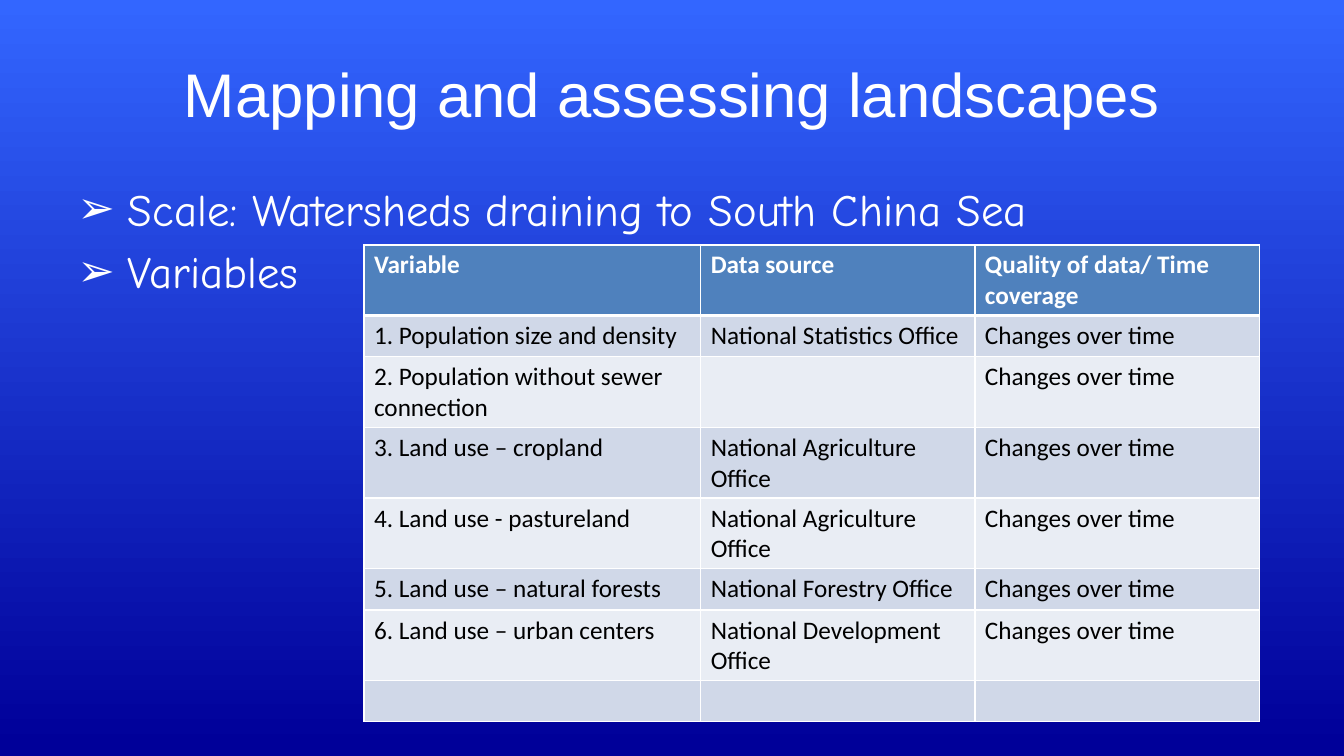
from lxml import etree
from pptx import Presentation
from pptx import util as u
from pptx.dml import color
from pptx.enum import text
from pptx.oxml import ns

COLORS = {
    "deep": "000099", "sky": "3366FF", "white": "FFFFFF", "black": "000000",
    "header": "4F81BD", "odd": "D0D8E8", "even": "E9EDF4",
}


def write(paragraph, words, size=18, font="Calibri", ink="white", bold=False):
    run = paragraph.add_run()
    run.text = words
    run.font.size = u.Pt(size)
    run.font.name = font
    run.font.bold = bold
    run.font.color.rgb = color.RGBColor.from_string(COLORS[ink])


def add_border(cell, side, points):
    line = etree.SubElement(cell._tc.get_or_add_tcPr(), ns.qn(f"a:ln{side}"), w=str(u.Pt(points)))
    fill = etree.SubElement(line, ns.qn("a:solidFill"))
    etree.SubElement(fill, ns.qn("a:srgbClr"), val=COLORS["white"])


deck = Presentation()
deck.slide_width = u.Inches(13.33)
deck.slide_height = u.Inches(7.5)
slide = deck.slides.add_slide(deck.slide_layouts[6])

backdrop = slide.background.fill
backdrop.gradient()
backdrop.gradient_angle = 90
for stop, name, position in zip(backdrop.gradient_stops, ("deep", "sky"), (0.01, 1)):
    stop.color.rgb = color.RGBColor.from_string(COLORS[name])
    stop.position = position

title = slide.shapes.add_textbox(u.Inches(0.67), u.Inches(0.3), u.Inches(12), u.Inches(1.25)).text_frame
title.word_wrap = True
title.vertical_anchor = text.MSO_ANCHOR.MIDDLE
title.paragraphs[0].alignment = text.PP_ALIGN.CENTER
write(title.paragraphs[0], "Mapping and assessing landscapes", size=44, font="Arial")

topics = slide.shapes.add_textbox(u.Inches(0.67), u.Inches(1.75), u.Inches(12), u.Inches(4.95)).text_frame
topics.word_wrap = True
for number, topic in enumerate(["Scale: Watersheds draining to South China Sea", "Variables"]):
    point = topics.add_paragraph() if number else topics.paragraphs[0]
    write(point, topic, size=32, font="Comic Neue")
    point.space_before = u.Pt(6.4)
    layout = point._p.get_or_add_pPr()
    layout.set("marL", str(u.Inches(0.5)))
    layout.set("indent", str(u.Inches(-0.5)))
    etree.SubElement(layout, ns.qn("a:buFont"), typeface="Wingdings 3")
    layout[-1].set("typeface", "Arial")
    etree.SubElement(layout, ns.qn("a:buChar"), char="➢")

CHANGES = "Changes over time"
sources = [
    ("Variable", "Data source", "Quality of data/ Time coverage"),
    ("1. Population size and density", "National Statistics Office", CHANGES),
    ("2. Population without sewer connection", "", CHANGES),
    ("3. Land use – cropland", "National Agriculture Office", CHANGES),
    ("4. Land use - pastureland", "National Agriculture Office", CHANGES),
    ("5. Land use – natural forests", "National Forestry Office", CHANGES),
    ("6. Land use – urban centers", "National Development Office", CHANGES),
    ("", "", ""),
]
variables = slide.shapes.add_table(
    len(sources), 3, u.Inches(3.61), u.Inches(2.43), u.Inches(8.88), u.Inches(0.41 * len(sources))
).table
for column, width in zip(variables.columns, (3.34, 2.72, 2.82)):
    column.width = u.Inches(width)

for row, entries in enumerate(sources):
    variables.rows[row].height = u.Inches(0.41)
    band = "header" if row == 0 else "odd" if row % 2 else "even"
    for column, entry in enumerate(entries):
        cell = variables.cell(row, column)
        for side in "LRTB":
            heavy = (row, side) in [(0, "B"), (1, "T")]
            add_border(cell, side, 3 if heavy else 1)
        cell.fill.solid()
        cell.fill.fore_color.rgb = color.RGBColor.from_string(COLORS[band])
        if entry:
            write(cell.text_frame.paragraphs[0], entry, ink="black" if row else "white", bold=row == 0)

deck.save("out.pptx")
